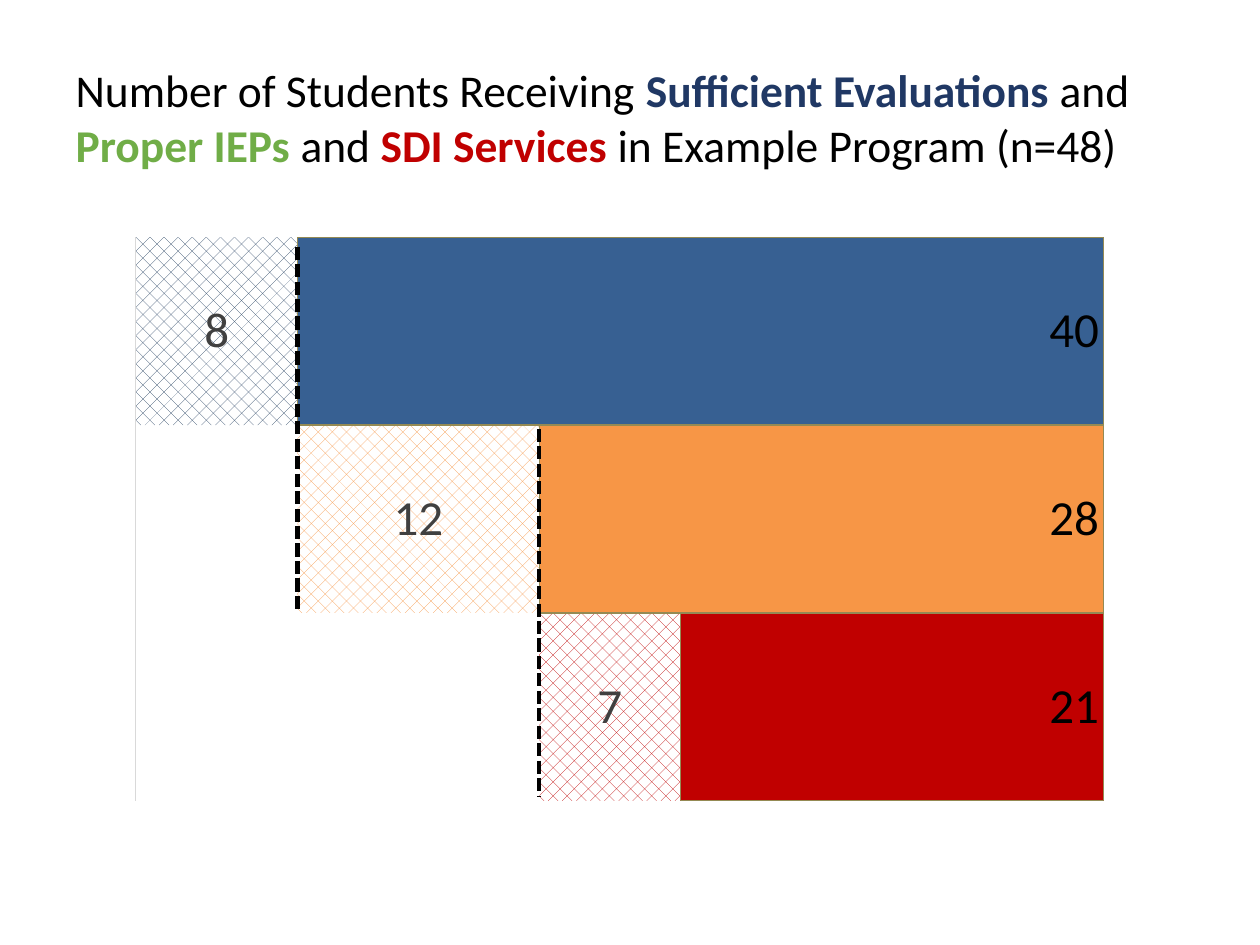
from dataclasses import dataclass

from lxml import etree
from pptx import Presentation
from pptx.chart.data import CategoryChartData
from pptx.dml.color import RGBColor
from pptx.enum.chart import XL_CHART_TYPE, XL_LABEL_POSITION
from pptx.enum.dml import MSO_LINE, MSO_PATTERN
from pptx.enum.shapes import MSO_CONNECTOR
from pptx.enum.text import MSO_ANCHOR, PP_ALIGN
from pptx.oxml import parse_xml
from pptx.oxml.ns import nsdecls, qn
from pptx.util import Inches, Pt

BAR_STACKED = XL_CHART_TYPE.BAR_STACKED
CENTER, INSIDE_END = XL_LABEL_POSITION.CENTER, XL_LABEL_POSITION.INSIDE_END
PERCENT_25 = MSO_PATTERN.PERCENT_25
SQUARE_DOT = MSO_LINE.SQUARE_DOT
STRAIGHT = MSO_CONNECTOR.STRAIGHT
MIDDLE, LEFT = MSO_ANCHOR.MIDDLE, PP_ALIGN.LEFT

FONT = "Calibri"
COLORS = {
    "black": "000000", "white": "FFFFFF", "grid": "D9D9D9", "label": "404040",
    "navy": "203864", "green": "70AD47", "red": "C00000", "orange": "F79646",
    "blue": "376092", "dark blue": "254061", "outline": "948A54",
}
TITLE = [
    ("Number of Students Receiving ", "black"),
    ("Sufficient Evaluations ", "navy"),
    ("and ", "black"),
    ("Proper IEPs ", "green"),
    ("and ", "black"),
    ("SDI Services ", "red"),
    ("in Example Program (n=48)", "black"),
]
TOTAL = 48
CHART_LEFT, CHART_TOP, CHART_WIDTH, CHART_HEIGHT = 0.92, 1.79, 8, 4.66
PLOT_SHARES = {"x": 0.02, "y": 0.02, "w": 0.96, "h": 0.96}


@dataclass
class Stage:
    """One bar of the chart, listed from bottom to top."""
    offset: int
    lost: int
    served: int
    hatch: str
    fill: str


@dataclass
class Divider:
    """A dashed line at a student count, spanning rows counted from the top."""
    students: int
    first_row: float
    last_row: float


STAGES = [
    Stage(20, 7, 21, "red", "red"),
    Stage(8, 12, 28, "orange", "orange"),
    Stage(0, 8, 40, "dark blue", "blue"),
]
DIVIDERS = [Divider(8, 0.05, 1.98), Divider(20, 1.02, 2.98)]


def color(name: str) -> RGBColor:
    """Return the named colour."""
    return RGBColor.from_string(COLORS[name])


def set_solid(fill, name: str) -> None:
    """Give a fill one plain colour."""
    fill.solid()
    fill.fore_color.rgb = color(name)


def set_hatch(fill, name: str) -> None:
    """Give a fill a coloured pattern on white."""
    fill.patterned()
    fill.pattern = PERCENT_25
    fill.fore_color.rgb = color(name)
    fill.back_color.rgb = color("white")


def set_font(font, size: float, name: str) -> None:
    """Set the typeface, size and colour of a font."""
    font.name = FONT
    font.size = Pt(size)
    font.color.rgb = color(name)


def write_title(slide) -> None:
    """Place the title and fill in its coloured phrases."""
    title = slide.shapes.title
    title.left, title.top = Inches(0.5), Inches(0.3)
    title.width, title.height = Inches(9), Inches(1.25)
    title.text_frame.vertical_anchor = MIDDLE
    title.text_frame.word_wrap = True
    paragraph = title.text_frame.paragraphs[0]
    paragraph.alignment = LEFT
    paragraph.font.name = FONT
    paragraph.font.size = Pt(26)
    for text, name in TITLE:
        run = paragraph.add_run()
        run.text = text
        run.font.bold = name != "black"
        run.font.color.rgb = color(name)


def show_values(series, position, name: str) -> None:
    """Label each bar of a series with its value."""
    labels = series.data_labels
    labels.show_value = True
    labels.position = position
    set_font(labels.font, 28, name)


def fix_plot_area(chart) -> None:
    """Pin the inner plot area to its shares of the chart frame."""
    plot_area = chart.plots[0]._element.getparent()
    for layout in plot_area.findall(qn("c:layout")):
        plot_area.remove(layout)
    layout = parse_xml(f"<c:layout {nsdecls('c')}><c:manualLayout/></c:layout>")
    settings = {"layoutTarget": "inner", "xMode": "edge", "yMode": "edge", **PLOT_SHARES}
    for tag, value in settings.items():
        etree.SubElement(layout[0], qn(f"c:{tag}")).set("val", str(value))
    plot_area.insert(0, layout)


def add_stage_chart(slide) -> None:
    """Add the stacked bars of lost and served students."""
    data = CategoryChartData()
    data.categories = [str(number) for number in range(1, len(STAGES) + 1)]
    for number, field in enumerate(("offset", "lost", "served"), 1):
        data.add_series(f"Series {number}", [getattr(stage, field) for stage in STAGES])
    frame = (CHART_LEFT, CHART_TOP, CHART_WIDTH, CHART_HEIGHT)
    chart = slide.shapes.add_chart(BAR_STACKED, *map(Inches, frame), data).chart
    chart.has_title = chart.has_legend = False
    set_font(chart.font, 10, "black")
    plot = chart.plots[0]
    plot.gap_width, plot.overlap, plot.vary_by_categories = 0, 100, False

    axis = chart.value_axis
    axis.minimum_scale, axis.maximum_scale, axis.major_unit = 0, TOTAL, TOTAL
    axis.has_major_gridlines = True
    axis.major_gridlines.format.line.color.rgb = color("grid")
    axis.major_gridlines.format.line.width = Pt(0.75)
    axis.visible = chart.category_axis.visible = False

    offset, lost, served = plot.series
    set_solid(offset.format.fill, "white")
    set_hatch(lost.format.fill, "black")
    set_solid(served.format.fill, "orange")
    for index, stage in enumerate(STAGES):
        set_hatch(lost.points[index].format.fill, stage.hatch)
        point = served.points[index].format
        set_solid(point.fill, stage.fill)
        for line in (served.format.line, point.line):
            line.color.rgb = color("outline")
            line.width = Pt(0.75)
    show_values(lost, CENTER, "label")
    show_values(served, INSIDE_END, "black")
    fix_plot_area(chart)


def add_divider(slide, divider: Divider) -> None:
    """Draw a dashed line where a group of students drops out."""
    left = CHART_LEFT + CHART_WIDTH * PLOT_SHARES["x"]
    top = CHART_TOP + CHART_HEIGHT * PLOT_SHARES["y"]
    row = CHART_HEIGHT * PLOT_SHARES["h"] / len(STAGES)
    x = Inches(left + CHART_WIDTH * PLOT_SHARES["w"] * divider.students / TOTAL)
    start, end = (Inches(top + row * edge) for edge in (divider.first_row, divider.last_row))
    line = slide.shapes.add_connector(STRAIGHT, x, start, x, end)
    line.line.color.rgb = color("black")
    line.line.width = Pt(2.5)
    line.line.dash_style = SQUARE_DOT
    etree.SubElement(line._element.spPr, qn("a:effectLst"))


def main() -> None:
    """Build and save the slide."""
    presentation = Presentation()
    presentation.slide_width, presentation.slide_height = Inches(10), Inches(7.5)
    slide = presentation.slides.add_slide(presentation.slide_layouts[5])
    set_solid(slide.background.fill, "white")
    write_title(slide)
    add_stage_chart(slide)
    for divider in DIVIDERS:
        add_divider(slide, divider)
    presentation.save("out.pptx")


if __name__ == "__main__":
    main()
